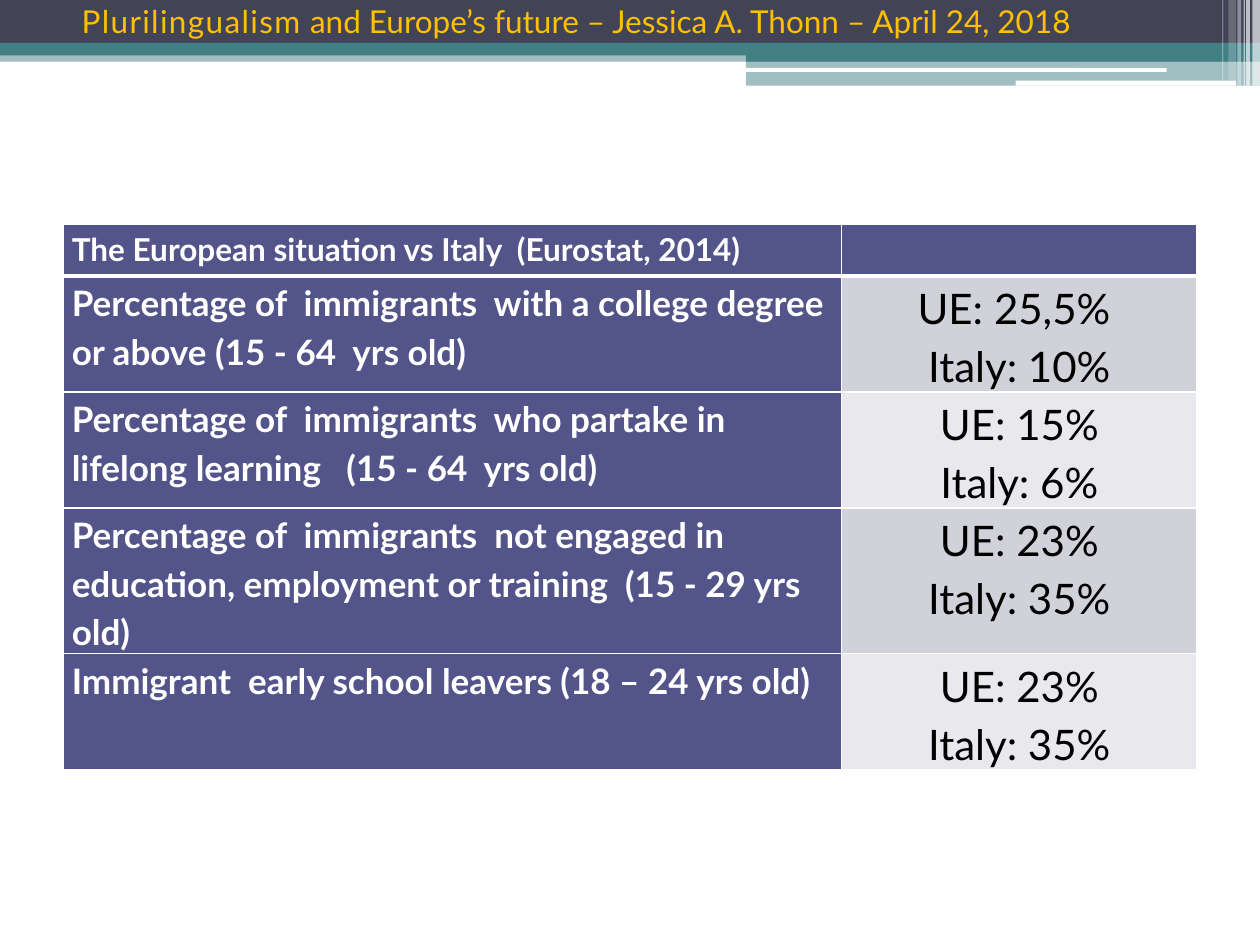
"""Builds a slide comparing immigrant education figures for Europe and Italy."""
from dataclasses import dataclass

from lxml import etree
from pptx import Presentation
from pptx import util as u
from pptx.dml.color import RGBColor
from pptx.enum import shapes, text
from pptx.oxml import ns


@dataclass(frozen=True)
class Theme:
    font: str = "Lato"
    white: str = "FFFFFF"
    black: str = "000000"
    slate: str = "424456"
    teal: str = "438086"
    gold: str = "FFC000"
    indigo: str = "53548A"
    bands: tuple = ("D1D1DA", "E9E9ED")
    heading: int = 18
    label: int = 20
    figure: int = 24


def write(paragraph, words, font, size, color, bold=False, spacing=None):
    run = paragraph.add_run()
    run.text = words
    run.font.name = font
    run.font.size = u.Pt(size)
    run.font.bold = bold
    run.font.color.rgb = RGBColor.from_string(color)
    if spacing is not None:
        run.font._element.set("spc", str(round(spacing * 100)))


class Deck:
    def __init__(self, theme):
        self.theme = theme
        self.show = Presentation()
        self.show.slide_width, self.show.slide_height = u.Inches(10), u.Inches(7.5)
        self.slide = self.show.slides.add_slide(self.show.slide_layouts[6])

    def bar(self, left, top, width, height, color, opacity=100, rounded=False):
        kind = shapes.MSO_SHAPE.ROUNDED_RECTANGLE if rounded else shapes.MSO_SHAPE.RECTANGLE
        bar = self.slide.shapes.add_shape(kind, *map(u.Inches, (left, top, width, height)))
        bar.shadow.inherit = False
        bar.line.fill.background()
        bar.fill.solid()
        bar.fill.fore_color.rgb = RGBColor.from_string(color)
        if opacity < 100:
            tint = bar._element.spPr.find(".//" + ns.qn("a:srgbClr"))
            etree.SubElement(tint, ns.qn("a:alpha"), val=str(opacity * 1000))

    def banner(self, left, top, width, height, pieces):
        frame = self.slide.shapes.add_textbox(*map(u.Inches, (left, top, width, height))).text_frame
        frame.word_wrap = True
        line = frame.paragraphs[0]
        line.space_before = u.Pt(3)
        line._p.get_or_add_pPr().set("marL", str(u.Inches(0.12)))
        for words, spacing in pieces:
            write(line, words, self.theme.font, self.theme.heading, self.theme.gold, spacing=spacing)

    def table(self, left, top, columns, heights):
        box = map(u.Inches, (left, top, sum(columns), sum(heights)))
        table = self.slide.shapes.add_table(len(heights), len(columns), *box).table
        table.first_row = table.horz_banding = False
        for column, width in zip(table.columns, columns):
            column.width = u.Inches(width)
        for row, height in zip(table.rows, heights):
            row.height = u.Inches(height)
        return table

    def cell(self, cell, lines, fill, size, color, bold=False, centred=False, top=1, bottom=1):
        cell.margin_left = cell.margin_right = u.Inches(0.07)
        cell.margin_top = cell.margin_bottom = 0
        props = cell._tc.get_or_add_tcPr()
        for side, points in (("L", 1), ("R", 1), ("T", top), ("B", bottom)):
            edge = etree.SubElement(props, ns.qn("a:ln" + side), w=str(u.Pt(points)))
            paint = etree.SubElement(edge, ns.qn("a:solidFill"))
            etree.SubElement(paint, ns.qn("a:srgbClr"), val=self.theme.white)
        cell.fill.solid()
        cell.fill.fore_color.rgb = RGBColor.from_string(fill)
        for index, words in enumerate(lines):
            frame = cell.text_frame
            line = frame.add_paragraph() if index else frame.paragraphs[0]
            line.line_spacing = 1.15
            line.alignment = text.PP_ALIGN.CENTER if centred else text.PP_ALIGN.LEFT
            write(line, words, self.theme.font, size, color, bold=bold)


theme = Theme()
deck = Deck(theme)

for left, top, width, height, color, opacity in (
    (0, 0.4, 10, 0.09, theme.teal, 50),
    (0, 0, 10, 0.34, theme.slate, 100),
    (0, 0.34, 10, 0.1, theme.teal, 100),
    (5.92, 0.39, 4.08, 0.1, theme.teal, 100),
    (5.92, 0.48, 4.08, 0.2, theme.teal, 50),
):
    deck.bar(left, top, width, height, color, opacity)
for left, top, width, height in ((5.91, 0.54, 3.35, 0.03), (8.06, 0.64, 1.75, 0.04)):
    deck.bar(left, top, width, height, theme.white, rounded=True)
for left, width, height, opacity in (
    (9.94, 0.06, 0.68, 65),
    (9.89, 0.03, 0.68, 65),
    (9.87, 0.01, 0.68, 60),
    (9.82, 0.03, 0.68, 40),
    (9.75, 0.06, 0.64, 20),
    (9.7, 0.01, 0.64, 30),
):
    deck.bar(left, 0, width, height, theme.white, opacity)

findings = (
    ("Percentage of  immigrants  with a college degree or above (15 - 64  yrs old) ", "UE: 25,5% ", "Italy: 10%"),
    ("Percentage of  immigrants  who partake in  lifelong learning   (15 - 64  yrs old) ", "UE: 15%", "Italy: 6%"),
    ("Percentage of  immigrants  not engaged in education, employment or training  (15 - 29 yrs old)",
     "UE: 23%", "Italy: 35%"),
    ("Immigrant  early school leavers (18 – 24 yrs old)", "UE: 23%", "Italy: 35%"),
)
comparison = deck.table(0.5, 1.78, (6.18, 2.82), [0.41] + [0.84] * len(findings))
for column, heading in enumerate((["The European situation vs Italy  (Eurostat, 2014)"], [])):
    deck.cell(comparison.cell(0, column), heading, theme.indigo, theme.heading, theme.white, bold=True, bottom=3)
for row, (topic, *figures) in enumerate(findings, 1):
    top = 3 if row == 1 else 1
    deck.cell(comparison.cell(row, 0), [topic], theme.indigo, theme.label, theme.white, bold=True, top=top)
    deck.cell(comparison.cell(row, 1), figures, theme.bands[(row - 1) % 2], theme.figure, theme.black,
              centred=True, top=top)

deck.banner(0.43, -0.03, 9, 0.45, (
    ("Plurilingualism", 0.8),
    (" and Europe’s future – Jessica A. Thonn – April 24, 2018", 0),
))
deck.show.save("out.pptx")
